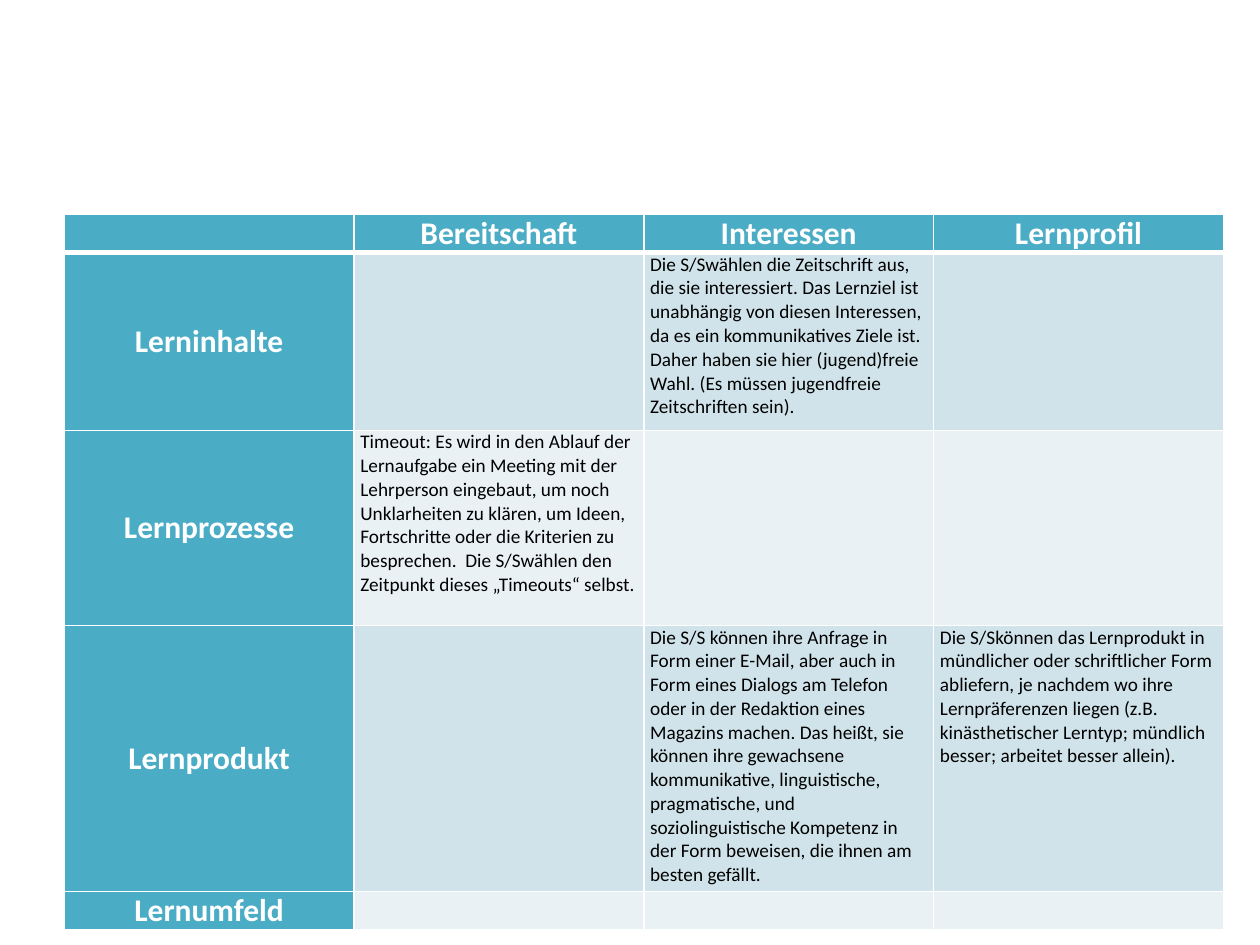
from lxml import etree
from pptx import Presentation
from pptx.dml.color import RGBColor
from pptx.enum.text import MSO_ANCHOR, PP_ALIGN
from pptx.oxml.ns import qn
from pptx.util import Inches, Pt

CENTER, LEFT = PP_ALIGN.CENTER, PP_ALIGN.LEFT
MIDDLE, TOP = MSO_ANCHOR.MIDDLE, MSO_ANCHOR.TOP
COLORS = {"head": "4BACC6", "odd": "D0E3EA", "even": "E9F1F5",
          "white": "FFFFFF", "text": "000000"}
FONT = "Calibri"

ROWS = [
    ["", "Bereitschaft", "Interessen", "Lernprofil"],
    ["Lerninhalte", "",
     "Die S/Swählen die Zeitschrift aus, die sie interessiert. Das Lernziel ist "
     "unabhängig von diesen Interessen, da es ein kommunikatives Ziele ist. Daher "
     "haben sie hier (jugend)freie Wahl. (Es müssen jugendfreie Zeitschriften sein).",
     ""],
    ["Lernprozesse",
     "Timeout: Es wird in den Ablauf der Lernaufgabe ein Meeting mit der Lehrperson "
     "eingebaut, um noch Unklarheiten zu klären, um Ideen, Fortschritte oder die "
     "Kriterien zu besprechen.  Die S/Swählen den Zeitpunkt dieses „Timeouts“ selbst.",
     "", ""],
    ["Lernprodukt", "",
     "Die S/S können ihre Anfrage in Form einer E-Mail, aber auch in Form eines "
     "Dialogs am Telefon oder in der Redaktion eines Magazins machen. Das heißt, sie "
     "können ihre gewachsene kommunikative, linguistische, pragmatische, und "
     "soziolinguistische Kompetenz in der Form beweisen, die ihnen am besten gefällt.",
     "Die S/Skönnen das Lernprodukt in mündlicher oder schriftlicher Form abliefern, "
     "je nachdem wo ihre Lernpräferenzen liegen (z.B. kinästhetischer Lerntyp; "
     "mündlich besser; arbeitet besser allein)."],
    ["Lernumfeld", "", "", ""],
]
COL_WIDTH = 2.3
ROW_HEIGHTS = [0.26, 1.41, 1.55, 2.11, 0.26]


def add_border(cell, side, width):
    ln = etree.SubElement(cell._tc.get_or_add_tcPr(), qn("a:ln" + side),
                          w=str(Pt(width)))
    fill = etree.SubElement(ln, qn("a:solidFill"))
    etree.SubElement(fill, qn("a:srgbClr"), val=COLORS["white"])


prs = Presentation()
prs.slide_width, prs.slide_height = Inches(10), Inches(7.5)
s = prs.slides.add_slide(prs.slide_layouts[6])

# Table grid
table = s.shapes.add_table(
    len(ROWS), len(ROWS[0]), Inches(0.51), Inches(1.7),
    Inches(COL_WIDTH * len(ROWS[0])), Inches(sum(ROW_HEIGHTS))).table
for column in table.columns:
    column.width = Inches(COL_WIDTH)
for row, height in zip(table.rows, ROW_HEIGHTS):
    row.height = Inches(height)

# Cells: headings in the first row and column, notes elsewhere
for i, texts in enumerate(ROWS):
    for j, text in enumerate(texts):
        cell = table.cell(i, j)
        heading = i == 0 or j == 0
        cell.margin_left = cell.margin_right = Inches(0.05)
        cell.margin_top = cell.margin_bottom = 0
        cell.vertical_anchor = MIDDLE if heading else TOP

        # White rules, heavier under the header row
        for side in "LRTB":
            under_header = (i, side) in [(0, "B"), (1, "T")]
            add_border(cell, side, 3 if under_header else 1)
        band = "head" if heading else "odd" if i % 2 else "even"
        cell.fill.solid()
        cell.fill.fore_color.rgb = RGBColor.from_string(COLORS[band])

        if text:
            p = cell.text_frame.paragraphs[0]
            p.alignment = CENTER if heading else LEFT
            p.space_after = Pt(4 if heading else 0)
            r = p.add_run()
            r.text = text
            r.font.name = FONT
            r.font.size = Pt(18 if heading else 11)
            r.font.bold = heading
            r.font.color.rgb = RGBColor.from_string(
                COLORS["white" if heading else "text"])

prs.save("out.pptx")
